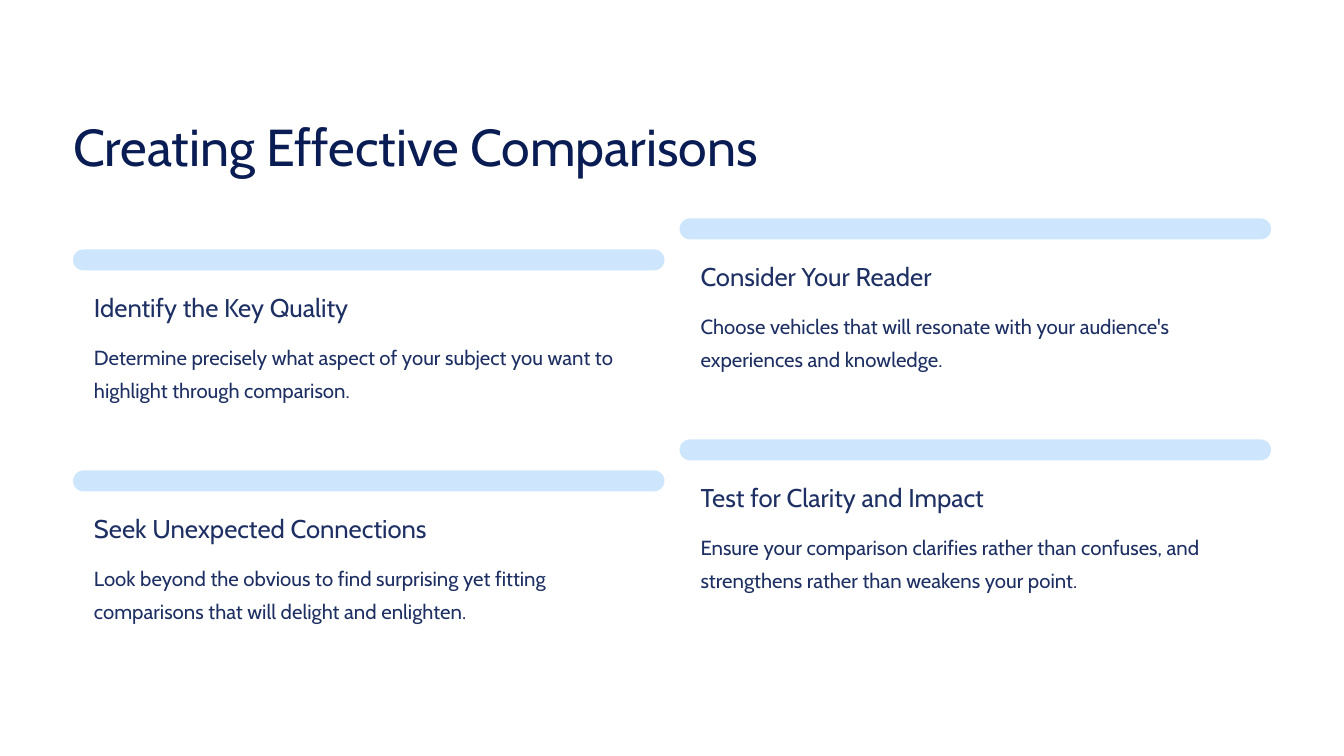
"""Builds a slide with four staggered cards on creating effective comparisons."""
from pptx import Presentation
from pptx.dml.color import RGBColor
from pptx.enum.shapes import MSO_SHAPE
from pptx.enum.text import MSO_ANCHOR, MSO_AUTO_SIZE, PP_ALIGN
from pptx.util import Pt

ROUNDED = MSO_SHAPE.ROUNDED_RECTANGLE
TOP = MSO_ANCHOR.TOP
LEFT = PP_ALIGN.LEFT
NO_AUTOFIT = MSO_AUTO_SIZE.NONE

COLUMNS = [(62.6, 213.8), (582.5, 187.2)]
ROW_PITCH = 189.4
CARDS = [
    ("Identify the Key Quality",
     "Determine precisely what aspect of your subject you want to highlight through comparison."),
    ("Consider Your Reader",
     "Choose vehicles that will resonate with your audience's experiences and knowledge."),
    ("Seek Unexpected Connections",
     "Look beyond the obvious to find surprising yet fitting comparisons that will delight and enlighten."),
    ("Test for Clarity and Impact",
     "Ensure your comparison clarifies rather than confuses, and strengthens rather than weakens your point."),
]


def rgb(value):
    return RGBColor.from_string(value)


class ComparisonSlide:
    FONT = "Cabin"
    TITLE_INK = "091C53"
    INK = "1E3063"
    BAR = "CEE6FD"
    BAR_WIDTH, BAR_HEIGHT = 507, 18
    INDENT = 18
    TEXT_WIDTH = 471

    def __init__(self, presentation):
        self.slide = presentation.slides.add_slide(presentation.slide_layouts[5])
        background = self.slide.background.fill
        background.solid()
        background.fore_color.rgb = rgb("FFFFFF")

    def set_text(self, holder, text, size, spacing, color):
        frame = holder.text_frame
        frame.text = text
        frame.word_wrap = True
        frame.auto_size = NO_AUTOFIT
        frame.vertical_anchor = TOP
        frame.margin_left = frame.margin_right = 0
        frame.margin_top = frame.margin_bottom = 0
        paragraph = frame.paragraphs[0]
        paragraph.alignment = LEFT
        paragraph.line_spacing = Pt(spacing)
        font = paragraph.runs[0].font
        font.name, font.size = self.FONT, Pt(size)
        font.color.rgb = rgb(color)

    def title(self, text, left, top, width, height):
        heading = self.slide.shapes.title
        heading.left, heading.top = Pt(left), Pt(top)
        heading.width, heading.height = Pt(width), Pt(height)
        self.set_text(heading, text, 44.5, 55.5, self.TITLE_INK)

    def text(self, text, left, top, height, size, spacing):
        box = self.slide.shapes.add_textbox(
            Pt(left), Pt(top), Pt(self.TEXT_WIDTH), Pt(height))
        self.set_text(box, text, size, spacing, self.INK)

    def bar(self, left, top):
        bar = self.slide.shapes.add_shape(
            ROUNDED, Pt(left), Pt(top), Pt(self.BAR_WIDTH), Pt(self.BAR_HEIGHT))
        bar.adjustments[0] = 0.5
        bar.shadow.inherit = False
        bar.fill.solid()
        bar.fill.fore_color.rgb = rgb(self.BAR)
        bar.line.fill.background()

    def card(self, heading, advice, left, top):
        self.bar(left, top)
        self.text(heading, left + self.INDENT, top + 35.4, 28, 22, 27.5)
        self.text(advice, left + self.INDENT, top + 74.2, 57, 17.5, 28.5)


def main():
    presentation = Presentation()
    presentation.slide_width, presentation.slide_height = Pt(1152), Pt(648)
    page = ComparisonSlide(presentation)
    page.title("Creating Effective Comparisons", COLUMNS[0][0], 95.8, 670, 56)
    for index, (heading, advice) in enumerate(CARDS):
        row, column = divmod(index, len(COLUMNS))
        left, first_top = COLUMNS[column]
        page.card(heading, advice, left, first_top + row * ROW_PITCH)
    presentation.save("out.pptx")


if __name__ == "__main__":
    main()
